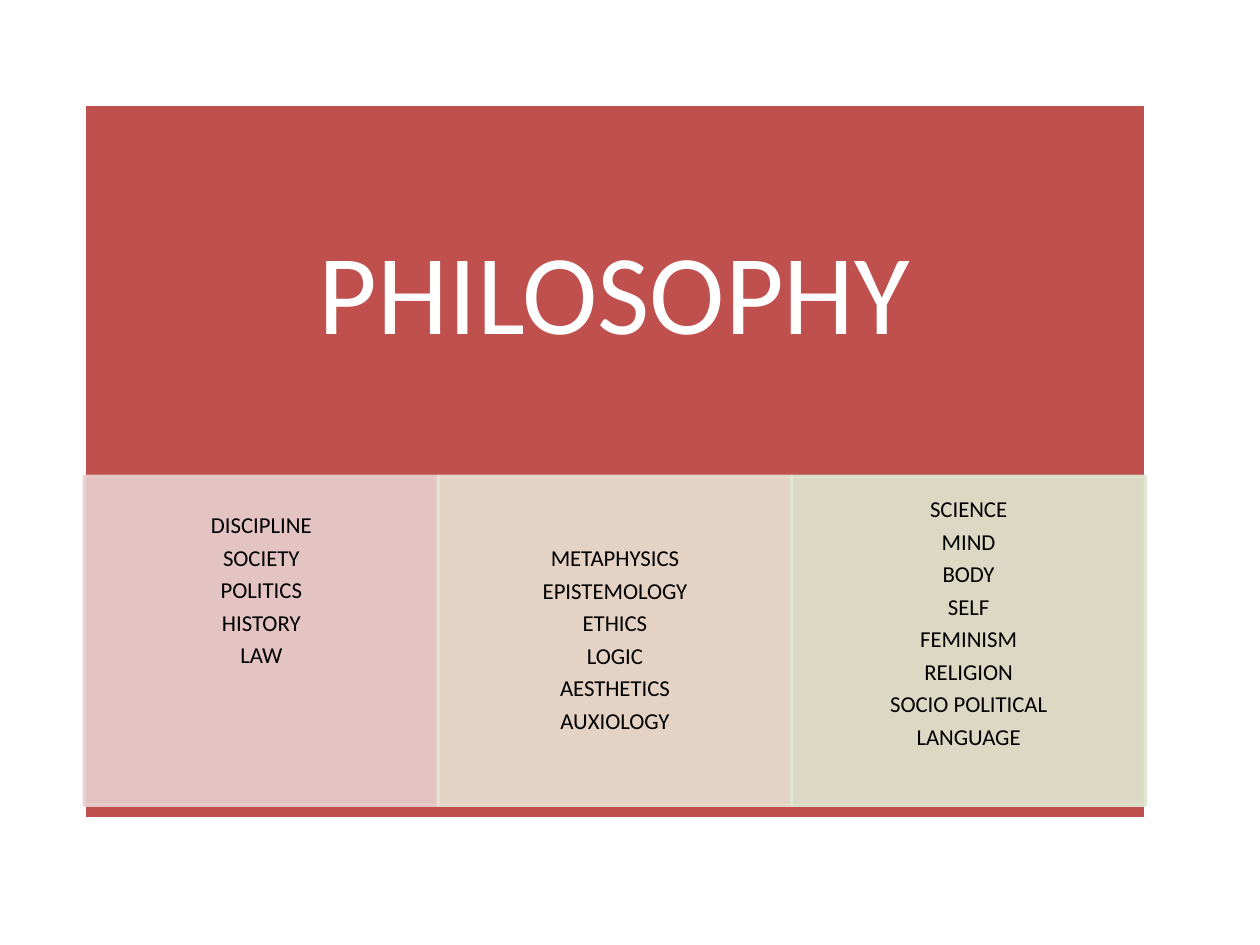
from dataclasses import dataclass

from lxml import etree
from pptx import Presentation
from pptx.dml.color import RGBColor
from pptx.enum.shapes import MSO_SHAPE
from pptx.enum.text import MSO_ANCHOR, PP_ALIGN
from pptx.oxml.ns import qn
from pptx.util import Inches, Pt

RECTANGLE = MSO_SHAPE.RECTANGLE
MIDDLE = MSO_ANCHOR.MIDDLE
CENTER = PP_ALIGN.CENTER


@dataclass(frozen=True)
class Theme:
    font: str = "Calibri"
    banner: str = "C0504D"
    white: str = "FFFFFF"
    black: str = "000000"
    title_size: int = 65
    topic_size: int = 13
    line_spacing: float = 0.9
    space_after: float = 4.5
    border: int = 2
    column_opacity: int = 90


THEME = Theme()

# Tint, topics, and the number of lines by which the list is raised.
COLUMNS = [
    ("E8D0D0", ["DISCIPLINE", "SOCIETY", "POLITICS", "HISTORY", "LAW"], 3),
    ("E8E1D1", ["METAPHYSICS", "EPISTEMOLOGY", "ETHICS", "LOGIC",
                "AESTHETICS", "AUXIOLOGY"], 0),
    ("DEE7D1", ["SCIENCE", "MIND", "BODY", "SELF", "FEMINISM", "RELIGION",
                "SOCIO POLITICAL", "LANGUAGE"], 1),
]
LINE_PITCH = 0.26


def set_opacity(color_format, percent):
    """Add an alpha value to a solid fill."""
    color = color_format._xPr.find(qn("a:solidFill"))[0]
    etree.SubElement(color, qn("a:alpha")).set("val", str(percent * 1000))


def add_panel(slide, box, fill, border):
    panel = slide.shapes.add_shape(RECTANGLE, *(Inches(v) for v in box))
    panel.shadow.inherit = False
    panel.fill.solid()
    panel.fill.fore_color.rgb = RGBColor.from_string(fill)
    panel.line.color.rgb = RGBColor.from_string(border)
    panel.line.width = Pt(THEME.border)
    return panel


def write_lines(panel, lines, size, color, insets):
    """Centre the lines in a panel; insets are left, top, right, bottom."""
    frame = panel.text_frame
    frame.word_wrap = True
    frame.vertical_anchor = MIDDLE
    (frame.margin_left, frame.margin_top,
     frame.margin_right, frame.margin_bottom) = (Inches(v) for v in insets)
    frame.text = "\n".join(lines)
    for paragraph in frame.paragraphs:
        paragraph.alignment = CENTER
        paragraph.line_spacing = THEME.line_spacing
        paragraph.space_after = Pt(THEME.space_after)
        for run in paragraph.runs:
            run.font.name = THEME.font
            run.font.size = Pt(size)
            run.font.color.rgb = RGBColor.from_string(color)


def add_banner(slide, box, title, title_height):
    """Draw the backdrop with its title centred in the upper part."""
    banner = add_panel(slide, box, THEME.banner, THEME.white)
    inset = 0.51
    below = box[3] - title_height
    write_lines(banner, [title], THEME.title_size, THEME.white,
                (inset, inset, inset, inset + below))


def add_topic_columns(slide, box, columns):
    left, top, width, height = box
    column_width = width / len(columns)
    for index, (tint, topics, raised_lines) in enumerate(columns):
        column_box = (left + index * column_width, top, column_width, height)
        column = add_panel(slide, column_box, tint, tint)
        set_opacity(column.fill, THEME.column_opacity)
        set_opacity(column.line.fill, THEME.column_opacity)
        write_lines(column, topics, THEME.topic_size, THEME.black,
                    (0.1, 0.02, 0.1, 0.02 + raised_lines * LINE_PITCH))


def main():
    presentation = Presentation()
    presentation.slide_width = Inches(10)
    presentation.slide_height = Inches(7.5)
    slide = presentation.slides.add_slide(presentation.slide_layouts[6])
    left, width = 0.67, 8.42
    add_banner(slide, (left, 0.83, width, 5.67), "PHILOSOPHY", 3.06)
    add_topic_columns(slide, (left, 3.78, width, 2.61), COLUMNS)
    presentation.save("out.pptx")


if __name__ == "__main__":
    main()
